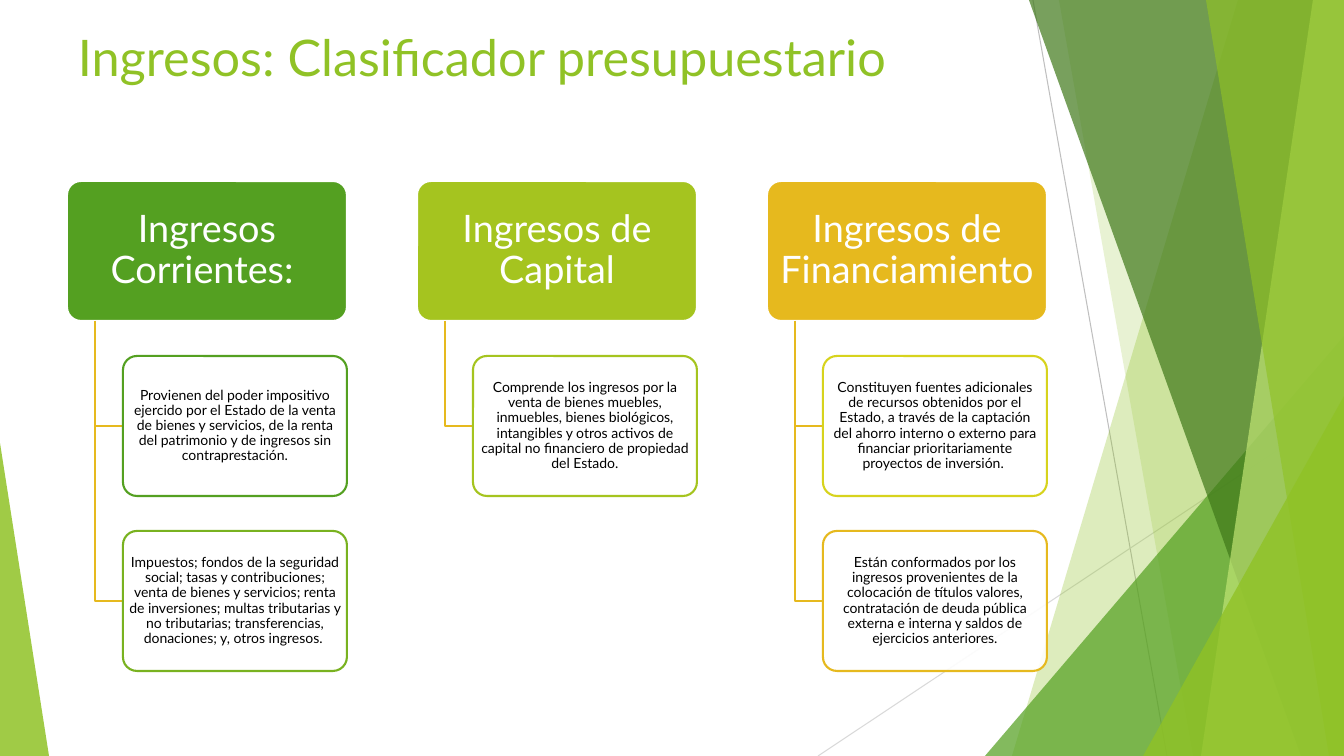
from lxml import etree
from pptx import Presentation
from pptx.dml.color import RGBColor
from pptx.enum.shapes import MSO_CONNECTOR, MSO_SHAPE
from pptx.enum.text import MSO_ANCHOR, PP_ALIGN
from pptx.oxml.ns import qn
from pptx.util import Pt

PX = 914400 / 100.8
WIDTH, HEIGHT = 1344, 756
FONT = "Lato"

WHITE = RGBColor(0xFF, 0xFF, 0xFF)
BLACK = RGBColor(0, 0, 0)
LIME = RGBColor(0x90, 0xC2, 0x26)
PALE_LIME = RGBColor(0xC0, 0xE4, 0x74)
GREEN = RGBColor(0x54, 0xA0, 0x21)
DARK_GREEN = RGBColor(0x3F, 0x78, 0x19)
LEAF = RGBColor(0x79, 0xB2, 0x20)
OLIVE = RGBColor(0xA5, 0xC4, 0x1F)
YELLOW = RGBColor(0xD7, 0xD3, 0x1D)
GOLD = RGBColor(0xE6, 0xB9, 0x1E)
GRAY = RGBColor(0xBF, 0xBF, 0xBF)
LIGHT_GRAY = RGBColor(0xD9, 0xD9, 0xD9)

# Header text, header colour, then (text, outline colour) of each detail
COLUMNS = [
    ("Ingresos Corrientes: ", GREEN, [
        ("Provienen del poder impositivo ejercido por el Estado de la venta de "
         "bienes y servicios, de la renta del patrimonio y de ingresos sin "
         "contraprestación.", GREEN),
        ("Impuestos; fondos de la seguridad social; tasas y contribuciones; "
         "venta de bienes y servicios; renta de inversiones; multas tributarias "
         "y no tributarias; transferencias, donaciones; y, otros ingresos. ", LEAF),
    ]),
    ("Ingresos de Capital", OLIVE, [
        ("Comprende los ingresos por la venta de bienes muebles, inmuebles, "
         "bienes biológicos, intangibles y otros activos de capital no "
         "financiero de propiedad del Estado.", OLIVE),
    ]),
    ("Ingresos de Financiamiento", GOLD, [
        ("Constituyen fuentes adicionales de recursos obtenidos por el Estado, "
         "a través de la captación del ahorro interno o externo para financiar "
         "prioritariamente proyectos de inversión. ", YELLOW),
        ("Están conformados por los ingresos provenientes de la colocación de "
         "títulos valores, contratación de deuda pública externa e interna y "
         "saldos de ejercicios anteriores.", GOLD),
    ]),
]


def emu(*lengths):
    return [round(length * PX) for length in lengths]


def paint(shape, fill=None, opacity=100, line=None):
    shape.shadow.inherit = False
    if fill is None:
        shape.fill.background()
    else:
        shape.fill.solid()
        shape.fill.fore_color.rgb = fill
        if opacity < 100:
            color = shape.fill._xPr.find(qn("a:solidFill"))[0]
            etree.SubElement(color, qn("a:alpha"), val=str(opacity * 1000))
    if line is None:
        shape.line.fill.background()
    else:
        shape.line.color.rgb = line
        shape.line.width = Pt(1.5)


def write(shape, text, size, color, align=PP_ALIGN.CENTER,
          anchor=MSO_ANCHOR.MIDDLE, margins=(10, 5), spacing=0.9):
    frame = shape.text_frame
    frame.word_wrap = True
    frame.vertical_anchor = anchor
    frame.margin_left = frame.margin_right = emu(margins[0])[0]
    frame.margin_top = frame.margin_bottom = emu(margins[1])[0]
    paragraph = frame.paragraphs[0]
    paragraph.text = text
    paragraph.alignment = align
    paragraph.line_spacing = spacing
    paragraph.font.name = FONT
    paragraph.font.size = Pt(size)
    paragraph.font.color.rgb = color


def add_outline(slide, points, close=True):
    start, *rest = points
    builder = slide.shapes.build_freeform(*start, scale=PX)
    builder.add_line_segments(rest, close=close)
    return builder.convert_to_shape()


def add_hairline(slide, start, end, color):
    line = slide.shapes.add_connector(MSO_CONNECTOR.STRAIGHT, *emu(*start, *end))
    line.line.color.rgb = color
    line.line.width = Pt(0.75)
    etree.SubElement(line._element.spPr, qn("a:effectLst"))


def add_band(slide, top_x, bottom_x, color, opacity):
    """Full-height band from a slanted left edge to the right slide edge."""
    band = add_outline(slide, [(top_x, 0), (WIDTH, 0),
                               (WIDTH, HEIGHT), (bottom_x, HEIGHT)])
    paint(band, color, opacity)


def add_corner(slide, x, y, w, apex, color, opacity):
    """Right triangle standing on the bottom slide edge."""
    corner = slide.shapes.add_shape(MSO_SHAPE.ISOSCELES_TRIANGLE,
                                    *emu(x, y, w, HEIGHT - y))
    corner.adjustments[0] = apex
    paint(corner, color, opacity)


def add_backdrop(slide):
    add_hairline(slide, (1033, 0), (1167, HEIGHT), GRAY)
    add_hairline(slide, (WIDTH, 406), (818, HEIGHT), LIGHT_GRAY)
    add_band(slide, 1238, 1012, LIME, 30)
    add_band(slide, 1059, 1193, LIME, 20)
    add_corner(slide, 985, 336, 359, 1, GREEN, 72)
    add_band(slide, 1029, 1301, DARK_GREEN, 70)
    add_band(slide, 1313, 1201, PALE_LIME, 70)
    add_band(slide, 1206, 1329, LIME, 65)
    add_corner(slide, 1143, 396, 201, 1, LIME, 80)
    add_corner(slide, 0, 443, 49, 0, LIME, 85)


def add_title(slide, x, y, w, h):
    title = slide.shapes.add_textbox(*emu(x, y, w, h))
    write(title, "Ingresos: Clasificador presupuestario", 36, LIME,
          align=PP_ALIGN.LEFT, anchor=MSO_ANCHOR.TOP, spacing=1.0)


def add_card(slide, box, text, size, color, margins, **look):
    card = slide.shapes.add_shape(MSO_SHAPE.ROUNDED_RECTANGLE, *emu(*box))
    card.adjustments[0] = 0.1
    paint(card, **look)
    write(card, text, size, color, margins=margins)


def add_column(slide, x, y, w, h, header, color, details):
    """Header card with its details hanging below on elbow lines."""
    trunk, indent, pitch = x + w // 10, x + w // 5, h * 5 // 4
    add_card(slide, (x, y, w, h), header, 27, WHITE, (6, 4),
             fill=color, line=WHITE)
    for row, (detail, outline) in enumerate(details, start=1):
        top = y + row * pitch
        middle = top + h // 2
        elbow = add_outline(slide, [(trunk, y + h), (trunk, middle),
                                    (indent, middle)], close=False)
        paint(elbow, line=GOLD)
        add_card(slide, (indent, top, w * 4 // 5, h), detail, 10, BLACK, (2, 1),
                 fill=WHITE, opacity=90, line=outline)


def add_hierarchy(slide, x, y, w, h):
    for index, column in enumerate(COLUMNS):
        add_column(slide, x + index * w * 5 // 4, y, w, h, *column)


def main():
    deck = Presentation()
    deck.slide_width, deck.slide_height = emu(WIDTH, HEIGHT)
    slide = deck.slides.add_slide(deck.slide_layouts[6])
    add_backdrop(slide)
    add_title(slide, 68, 21, 1210, 126)
    add_hierarchy(slide, 67, 181, 280, 140)
    deck.save("out.pptx")


if __name__ == "__main__":
    main()
